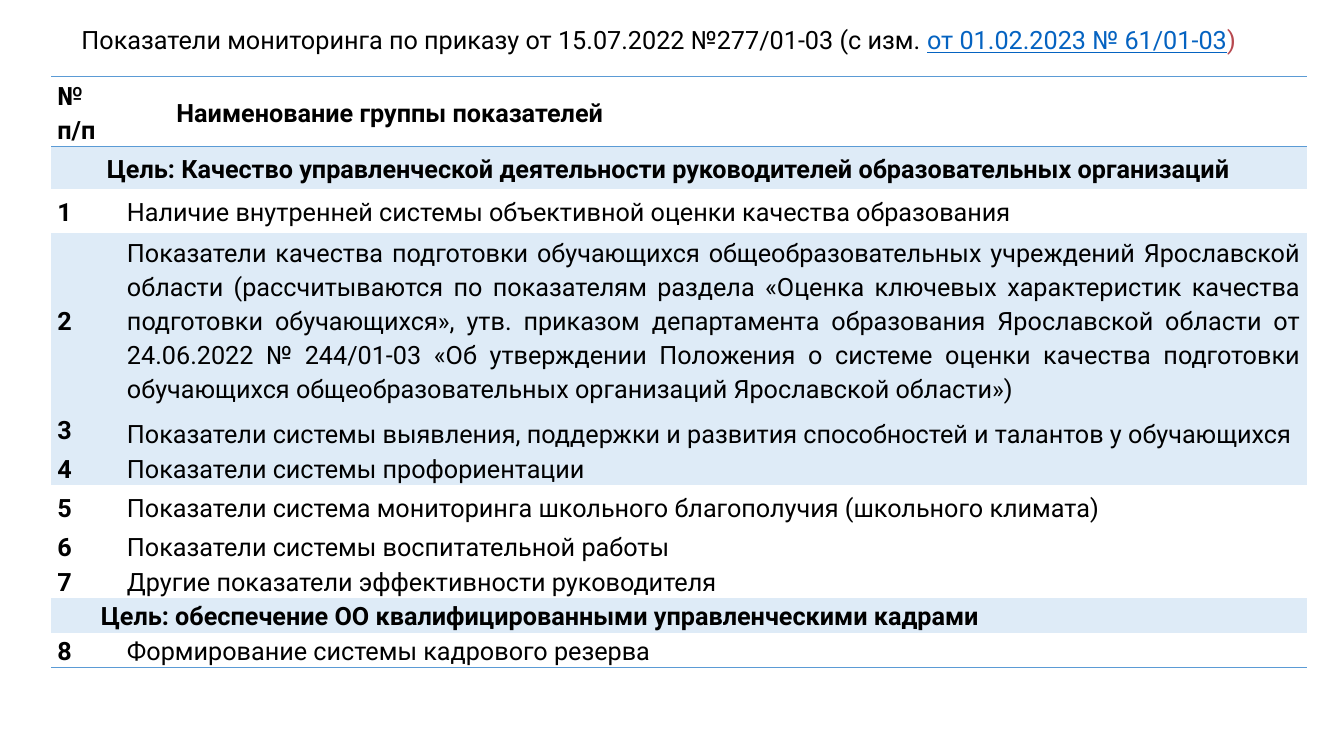
from lxml import etree
from pptx import Presentation
from pptx.dml.color import RGBColor
from pptx.enum.text import MSO_ANCHOR, MSO_AUTO_SIZE, PP_ALIGN
from pptx.oxml.ns import qn
from pptx.util import Inches, Pt

JUSTIFY, LEFT = PP_ALIGN.JUSTIFY, PP_ALIGN.LEFT
MIDDLE, BOTTOM = MSO_ANCHOR.MIDDLE, MSO_ANCHOR.BOTTOM
GROW = MSO_AUTO_SIZE.SHAPE_TO_FIT_TEXT
NO_STYLE = "{2D5ABB26-0587-4C30-8999-92F81FD0307C}"

BLACK, WHITE, BLUE, PALE = "000000", "FFFFFF", "5B9BD5", "DEEBF7"
LINK, RED = "0563C1", "B7484F"
NUMBER_INDENT, TEXT_INDENT, GOAL_INDENT = -0.08, 0.49, 0.43

TITLE = [
    ("Показатели мониторинга по приказу от 15.07.2022 №277/01-03 (с изм. ", BLACK, False),
    ("от 01.02.2023 № 61/01-03", LINK, True),
    (")", RED, False),
]
HEADER = ("№\nп/п", "Наименование группы показателей")

# Goals: text, first-line indent, row height
QUALITY_GOAL = ("Цель: Качество управленческой деятельности руководителей "
                "образовательных организаций", TEXT_INDENT, 0.43)
STAFF_GOAL = ("Цель: обеспечение ОО квалифицированными управленческими кадрами",
              GOAL_INDENT, 0.34)

# Indicators: text, row height, fill
QUALITY_INDICATORS = [
    ("Наличие внутренней системы объективной оценки качества образования", 0.43, None),
    ("Показатели качества подготовки обучающихся общеобразовательных учреждений "
     "Ярославской области (рассчитываются по показателям раздела «Оценка ключевых "
     "характеристик качества подготовки обучающихся», утв. приказом департамента "
     "образования Ярославской области от 24.06.2022 № 244/01-03 «Об утверждении "
     "Положения о системе оценки качества подготовки обучающихся общеобразовательных "
     "организаций Ярославской области»)", 1.71, PALE),
    ("Показатели системы выявления, поддержки и развития способностей и талантов "
     "у обучающихся", 0.43, PALE),
    ("Показатели системы профориентации", 0.34, PALE),
    ("Показатели система мониторинга школьного благополучия (школьного климата)", 0.43, None),
    ("Показатели системы воспитательной работы", 0.34, WHITE),
    ("Другие показатели эффективности руководителя", 0.34, None),
]
STAFF_INDICATORS = [("Формирование системы кадрового резерва", 0.34, None)]


def color(value):
    return RGBColor.from_string(value)


class SlideBuilder:
    def __init__(self, slide, font="Roboto", size=18, line_spacing=1.15):
        self.slide = slide
        self.font, self.size, self.line_spacing = font, size, line_spacing

    def format_run(self, run, fill=BLACK, bold=False, underline=False):
        run.font.name, run.font.size = self.font, Pt(self.size)
        run.font.color.rgb = color(fill)
        run.font.bold, run.font.underline = bold, underline

    def format_paragraph(self, paragraph, indent=0, align=JUSTIFY):
        paragraph.alignment = align
        paragraph.line_spacing = self.line_spacing
        if indent:
            properties = paragraph._p.get_or_add_pPr()
            properties.set("marL", "0")
            properties.set("indent", str(Inches(indent)))

    def title(self, left, top, width, height, parts):
        box = self.slide.shapes.add_textbox(
            Inches(left), Inches(top), Inches(width), Inches(height))
        frame = box.text_frame
        frame.word_wrap, frame.auto_size = True, GROW
        paragraph = frame.paragraphs[0]
        self.format_paragraph(paragraph, TEXT_INDENT)
        paragraph.space_after = Pt(10)
        for text, fill, underline in parts:
            run = paragraph.add_run()
            run.text = text
            self.format_run(run, fill, underline=underline)

    def table(self, left, top, columns, heights):
        frame = self.slide.shapes.add_table(
            len(heights), len(columns), Inches(left), Inches(top),
            Inches(sum(columns)), Inches(sum(heights)))
        table = frame.table
        table.first_row = table.horz_banding = False
        table._tbl.tblPr[0].text = NO_STYLE
        for column, width in zip(table.columns, columns):
            column.width = Inches(width)
        for row, height in zip(table.rows, heights):
            row.height = Inches(height)
        return table

    def cell(self, cell, text, indent=0, bold=False, fill=None, align=JUSTIFY, anchor=MIDDLE):
        cell.margin_left = cell.margin_right = Inches(0.06)
        cell.margin_top = cell.margin_bottom = 0
        cell.vertical_anchor = anchor
        cell.text_frame.text = text
        for paragraph in cell.text_frame.paragraphs:
            self.format_paragraph(paragraph, indent, align)
            for run in paragraph.runs:
                self.format_run(run, bold=bold)
        if fill:
            cell.fill.solid()
            cell.fill.fore_color.rgb = color(fill)
        else:
            cell.fill.background()

    def rule(self, row, *sides):
        for cell in row.cells:
            properties = cell._tc.get_or_add_tcPr()
            for position, side in enumerate(sides):
                line = etree.Element(qn("a:" + side), w=str(Pt(1)))
                solid = etree.SubElement(line, qn("a:solidFill"))
                etree.SubElement(solid, qn("a:srgbClr"), val=BLUE)
                properties.insert(position, line)


def main():
    presentation = Presentation()
    presentation.slide_width, presentation.slide_height = Inches(13.33), Inches(7.5)
    slide = presentation.slides.add_slide(presentation.slide_layouts[6])
    builder = SlideBuilder(slide)

    builder.title(0.22, 0.15, 12.93, 0.42, TITLE)

    # Table frame
    sections = [(QUALITY_GOAL, QUALITY_INDICATORS), (STAFF_GOAL, STAFF_INDICATORS)]
    heights = [0.69]
    for goal, indicators in sections:
        heights += [goal[2]] + [height for _, height, _ in indicators]
    table = builder.table(0.51, 0.76, [0.69, 11.76], heights)

    # Header
    for column, indent in enumerate((NUMBER_INDENT, TEXT_INDENT)):
        builder.cell(table.cell(0, column), HEADER[column], indent, bold=True)

    # Goals with their numbered indicators
    row, number = 1, 1
    for (goal, indent, _), indicators in sections:
        table.cell(row, 0).merge(table.cell(row, 1))
        builder.cell(table.cell(row, 0), goal, indent, bold=True, fill=PALE)
        row += 1
        for text, _, fill in indicators:
            builder.cell(table.cell(row, 0), str(number), NUMBER_INDENT, bold=True, fill=fill)
            align, anchor = (LEFT, BOTTOM) if number == 3 else (JUSTIFY, MIDDLE)
            builder.cell(table.cell(row, 1), text, fill=fill, align=align, anchor=anchor)
            row, number = row + 1, number + 1

    # Blue rules
    builder.rule(table.rows[0], "lnT", "lnB")
    builder.rule(table.rows[len(heights) - 1], "lnB")

    presentation.save("out.pptx")


if __name__ == "__main__":
    main()
